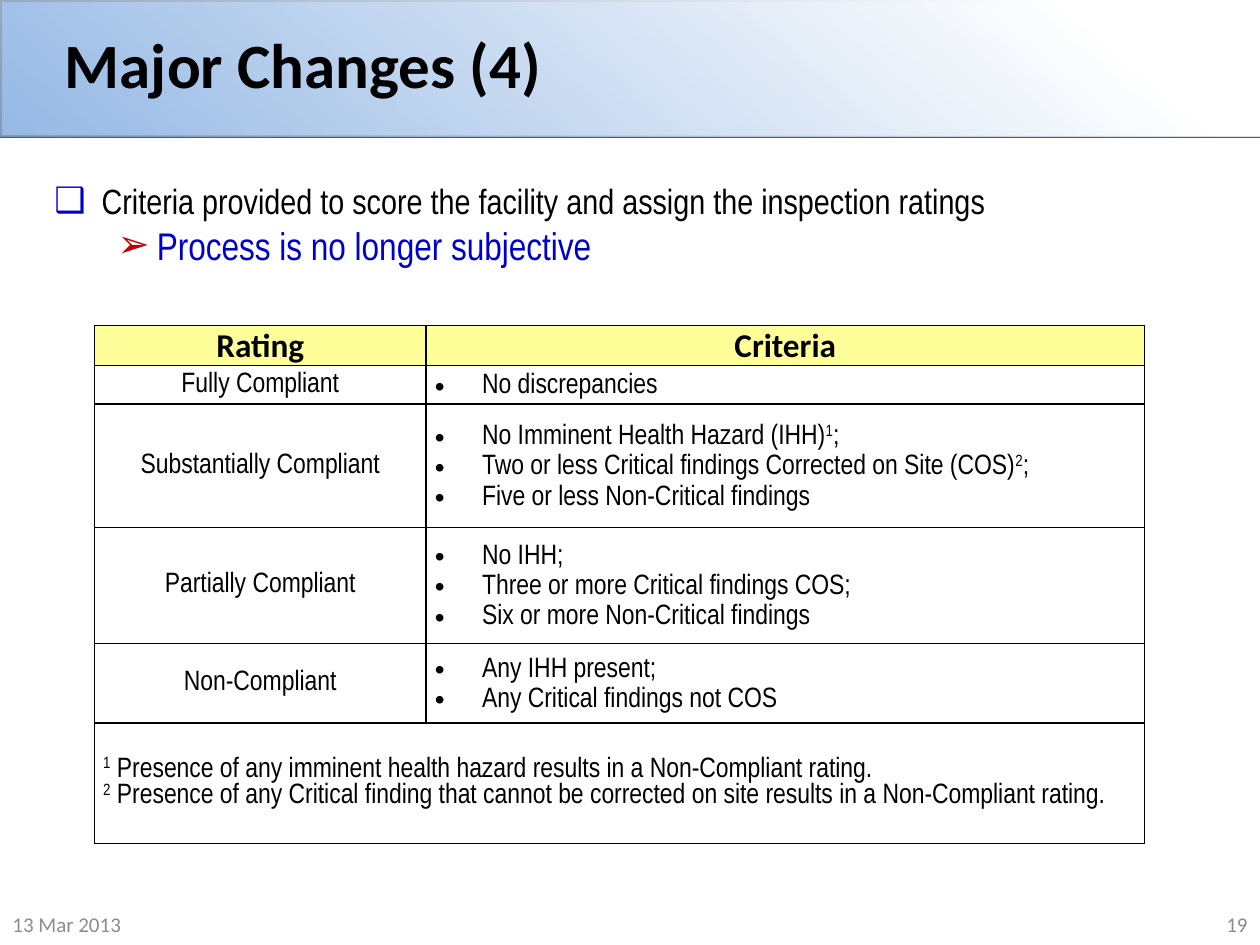
import pptx
import pptx.dml.color
import pptx.enum.dml
import pptx.enum.shapes
import pptx.enum.text
import pptx.oxml
import pptx.oxml.ns
import pptx.util
from lxml import etree

Pt = pptx.util.Pt
RGBColor = pptx.dml.color.RGBColor
Align = pptx.enum.text.PP_ALIGN
Anchor = pptx.enum.text.MSO_ANCHOR

BLACK = RGBColor(0x00, 0x00, 0x00)
WHITE = RGBColor(0xFF, 0xFF, 0xFF)
BLUE = RGBColor(0x00, 0x00, 0xCC)
RED = RGBColor(0xC0, 0x00, 0x00)
GREY = RGBColor(0x8C, 0x8C, 0x8C)
YELLOW = RGBColor(0xFF, 0xFF, 0x99)
BANNER = RGBColor(0x55, 0x8E, 0xD5)
BANNER_EDGE = RGBColor(0x3A, 0x5F, 0x8C)

HEADING_FONT = "Calibri"
BODY_FONT = "Arial Narrow"
COLUMN_WIDTHS = (189.5, 410.5)
ROW_HEIGHTS = (21, 18, 70.5, 58.5, 45.5, 69)
TAB_STOPS = (18, 36, 54)

# A line of criteria is a list of (text, is superscript).
RATINGS = [
    ("Fully Compliant", [[("No discrepancies", False)]]),
    ("Substantially Compliant", [
        [("No Imminent Health Hazard (IHH)", False), ("1", True), (";", False)],
        [("Two or less Critical findings Corrected on Site (COS)", False),
         ("2", True), (";", False)],
        [("Five or less Non-Critical findings", False)],
    ]),
    ("Partially Compliant", [
        [("No IHH;", False)],
        [("Three or more Critical findings COS;", False)],
        [("Six or more Non-Critical findings", False)],
    ]),
    ("Non-Compliant", [
        [("Any IHH present;", False)],
        [("Any Critical findings not COS", False)],
    ]),
]
FOOTNOTES = [
    [("1", True),
     (" Presence of any imminent health hazard results in a Non-Compliant rating.", False)],
    [("2", True),
     (" Presence of any Critical finding that cannot be corrected on site"
      " results in a Non-Compliant rating.", False)],
]


def add_child(parent, tag, **attributes):
    child = etree.SubElement(parent, pptx.oxml.ns.qn(tag))
    for name, value in attributes.items():
        child.set(name, str(value))
    return child


def add_span(para, text, size, font=BODY_FONT, color=BLACK, bold=False, raised=False):
    span = para.add_run()
    span.text = text
    span.font.size = Pt(size)
    span.font.name = font
    span.font.bold = bold
    span.font.color.rgb = color
    if raised:
        span.font._element.set("baseline", "30000")


def add_bullet(para, symbol, color, left, hanging):
    properties = para._p.get_or_add_pPr()
    properties.set("marL", str(Pt(left)))
    properties.set("indent", str(-Pt(hanging)))
    bullet_color = add_child(properties, "a:buClr")
    add_child(bullet_color, "a:srgbClr", val=color)
    add_child(properties, "a:buFont", typeface="Arial")
    add_child(properties, "a:buChar", char=symbol)


def add_tabs(para):
    tabs = add_child(para._p.get_or_add_pPr(), "a:tabLst")
    for stop in TAB_STOPS:
        add_child(tabs, "a:tab", pos=Pt(stop), algn="l")


def next_para(frame, index):
    return frame.add_paragraph() if index else frame.paragraphs[0]


def add_box(page, left, top, width, height, anchor=Anchor.MIDDLE):
    box = page.shapes.add_textbox(Pt(left), Pt(top), Pt(width), Pt(height))
    frame = box.text_frame
    frame.word_wrap = True
    frame.vertical_anchor = anchor
    return frame


def add_label(page, position, text, size, color, bold=False, align=Align.LEFT):
    para = add_box(page, *position).paragraphs[0]
    para.alignment = align
    add_span(para, text, size, HEADING_FONT, color, bold)


def add_banner_layer(page):
    layer = page.shapes.add_shape(
        pptx.enum.shapes.MSO_SHAPE.RECTANGLE, 0, 0, Pt(720), Pt(78))
    layer.shadow.inherit = False
    return layer


def add_banner(page):
    base = add_banner_layer(page)
    base.fill.solid()
    base.fill.fore_color.rgb = BANNER
    base.line.color.rgb = BANNER_EDGE
    base.line.width = Pt(2)

    veil = add_banner_layer(page)
    veil.line.fill.background()
    veil.fill.gradient()
    veil.fill.gradient_angle = 230
    for stop, place in zip(veil.fill.gradient_stops, (0.14, 1)):
        stop.position = place
        stop.color.rgb = WHITE
    clear_color = veil._element.spPr.findall(".//" + pptx.oxml.ns.qn("a:srgbClr"))[-1]
    add_child(clear_color, "a:alpha", val=37000)


def add_points(page):
    frame = add_box(page, 24, 96, 672, 78, Anchor.TOP)
    frame.margin_top = Pt(6.6)
    first = frame.paragraphs[0]
    add_bullet(first, "❑", BLUE, 27, 27)
    add_span(first, "Criteria provided to score the facility and assign the inspection ratings", 20)
    second = frame.add_paragraph()
    second.level = 1
    add_bullet(second, "➢", RED, 58.5, 22.5)
    add_span(second, "Process is no longer subjective", 22, color=BLUE)


def style_cell(cell, fill=None):
    cell.vertical_anchor = Anchor.MIDDLE
    cell.margin_left = cell.margin_right = Pt(5)
    cell.margin_top = cell.margin_bottom = 0
    properties = cell._tc.get_or_add_tcPr()
    for side in ("a:lnL", "a:lnR", "a:lnT", "a:lnB"):
        border = add_child(properties, side, w=Pt(1))
        add_child(add_child(border, "a:solidFill"), "a:srgbClr", val=BLACK)
    if fill is None:
        cell.fill.background()
    else:
        cell.fill.solid()
        cell.fill.fore_color.rgb = fill


def write_centred(cell, text, size, font=BODY_FONT, bold=False):
    para = cell.text_frame.paragraphs[0]
    add_tabs(para)
    para.alignment = Align.CENTER
    add_span(para, text, size, font, bold=bold)


def write_lines(cell, lines, bulleted):
    for index, line in enumerate(lines):
        para = next_para(cell.text_frame, index)
        if bulleted:
            add_bullet(para, "•", BLACK, 27, 27)
        add_tabs(para)
        if bulleted:
            para.line_spacing = 1.15
        for text, raised in line:
            add_span(para, text, 16, raised=raised)


def add_rating_table(page):
    table = page.shapes.add_table(
        len(ROW_HEIGHTS), len(COLUMN_WIDTHS), Pt(54), Pt(186),
        Pt(sum(COLUMN_WIDTHS)), Pt(sum(ROW_HEIGHTS))).table
    table.first_row = table.horz_banding = False
    for column, width in zip(table.columns, COLUMN_WIDTHS):
        column.width = Pt(width)
    for index, height in enumerate(ROW_HEIGHTS):
        table.rows[index].height = Pt(height)
        for cell in table.rows[index].cells:
            style_cell(cell, YELLOW if index == 0 else None)

    for column, heading in enumerate(("Rating", "Criteria")):
        write_centred(table.cell(0, column), heading, 19, HEADING_FONT, True)
    for row, (rating, criteria) in enumerate(RATINGS, start=1):
        write_centred(table.cell(row, 0), rating, 16)
        write_lines(table.cell(row, 1), criteria, bulleted=True)
    last = len(ROW_HEIGHTS) - 1
    table.cell(last, 0).merge(table.cell(last, 1))
    write_lines(table.cell(last, 0), FOOTNOTES, bulleted=False)


def main():
    deck = pptx.Presentation()
    deck.slide_width, deck.slide_height = Pt(720), Pt(540)
    page = deck.slides.add_slide(deck.slide_layouts[6])
    add_banner(page)
    add_label(page, (30, 0, 570, 72), "Major Changes (4)", 36, BLACK, bold=True)
    add_points(page)
    add_label(page, (0, 516, 168, 24), "13 Mar 2013", 12, GREY)
    add_rating_table(page)
    add_label(page, (552, 516, 168, 24), "19", 12, GREY, align=Align.RIGHT)
    deck.save("out.pptx")


if __name__ == "__main__":
    main()
